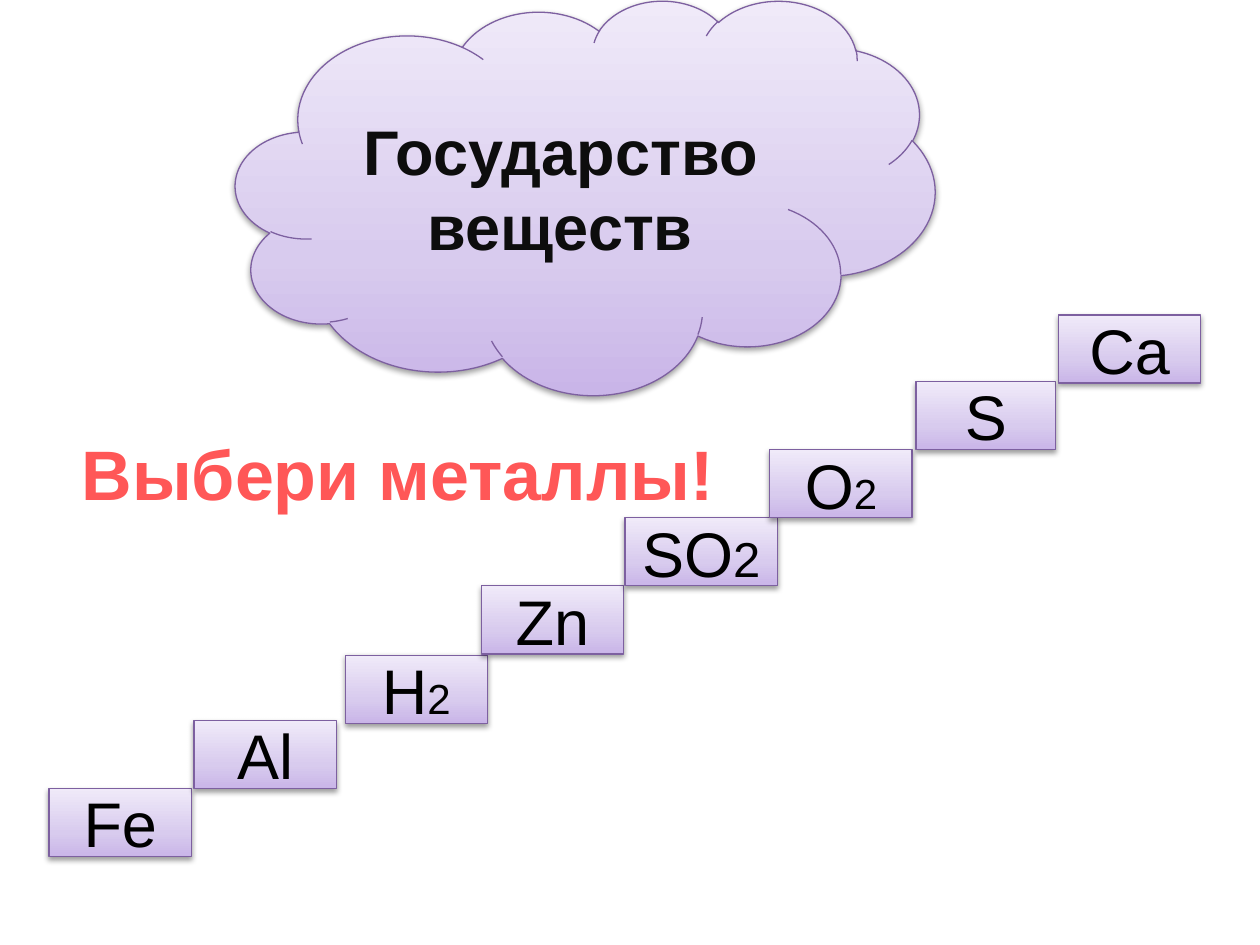
from dataclasses import dataclass

from lxml import etree
from pptx import Presentation
from pptx.dml.color import RGBColor
from pptx.enum.shapes import MSO_SHAPE
from pptx.enum.text import MSO_ANCHOR, PP_ALIGN
from pptx.oxml.ns import qn
from pptx.util import Emu, Pt

RECT, CLOUD = MSO_SHAPE.RECTANGLE, MSO_SHAPE.CLOUD
MIDDLE = MSO_ANCHOR.MIDDLE
LEFT, CENTER = PP_ALIGN.LEFT, PP_ALIGN.CENTER

SCALE = 9144  # EMU in one px, 100 px to the inch
STOPS = ((0, "C9B5E8"), (35, "D8CBEE"), (100, "F0EAF9"))
EDGE = "7D60A0"
STEP_H = 54


@dataclass
class Step:
    left: int
    top: int
    main: str
    sub: str = ""
    small: int = 24
    width: int = 113


STEPS = [
    Step(39, 626, "Fe"),
    Step(154, 572, "Al"),
    Step(274, 520, "H", "2"),
    Step(382, 465, "Zn"),
    Step(496, 411, "SO", "2", 28, 121),
    Step(611, 357, "O", "2"),
    Step(727, 303, "S", width=111),
    Step(840, 250, "Ca"),
]


def px(*sizes: int) -> list[Emu]:
    return [Emu(size * SCALE) for size in sizes]


def color(code: str) -> RGBColor:
    return RGBColor.from_string(code)


def add(node, tag: str, **values):
    return etree.SubElement(node, qn(tag), {k: str(v) for k, v in values.items()})


def style(shape) -> None:
    """Give a shape the lilac gradient, thin edge and soft shadow."""
    shape.fill.gradient()
    shape.fill.gradient_angle = 90
    shape.line.color.rgb = color(EDGE)
    shape.line.width = Pt(0.75)
    shape.shadow.inherit = False
    props = shape._element.spPr

    stops = props.find(".//" + qn("a:gsLst"))
    for stop in list(stops):
        stops.remove(stop)
    for place, code in STOPS:
        add(add(stops, "a:gs", pos=place * 1000), "a:srgbClr", val=code)

    shade = add(props.find(qn("a:effectLst")), "a:outerShdw", blurRad=40000,
                dist=20000, dir=5400000, rotWithShape=0)
    add(add(shade, "a:srgbClr", val="000000"), "a:alpha", val=38000)


def write(shape, runs: list[tuple[str, int]], code: str, align, bold=False) -> None:
    frame = shape.text_frame
    frame.word_wrap = True
    frame.vertical_anchor = MIDDLE
    para = frame.paragraphs[0]
    para.alignment = align
    for text, size in runs:
        run = para.add_run()
        run.text = text
        run.font.color.rgb = color(code)
        form = {"name": "Arial", "size": Pt(size), "bold": bold}
        for key, value in form.items():
            setattr(run.font, key, value)


def draw_step(shapes, step: Step) -> None:
    box = shapes.add_shape(RECT, *px(step.left, step.top, step.width, STEP_H))
    style(box)
    runs = [(step.main, 36)]
    if step.sub:
        runs.append((step.sub, step.small))
    write(box, runs, "000000", CENTER)


def main() -> None:
    deck = Presentation()
    deck.slide_width, deck.slide_height = px(1000, 750)
    slide = deck.slides.add_slide(deck.slide_layouts[6])

    # Task
    task = slide.shapes.add_textbox(*px(55, 328, 530, 94))
    write(task, [("Выбери металлы!", 40)], "FF5757", LEFT, True)

    # Staircase of substances
    stairs = slide.shapes.add_group_shape()
    for step in STEPS:
        draw_step(stairs.shapes, step)

    # Title cloud
    cloud = slide.shapes.add_shape(CLOUD, *px(187, 0, 555, 313))
    style(cloud)
    write(cloud, [("Государство веществ", 36)], "0D0D0D", CENTER, True)

    deck.save("out.pptx")


if __name__ == "__main__":
    main()
